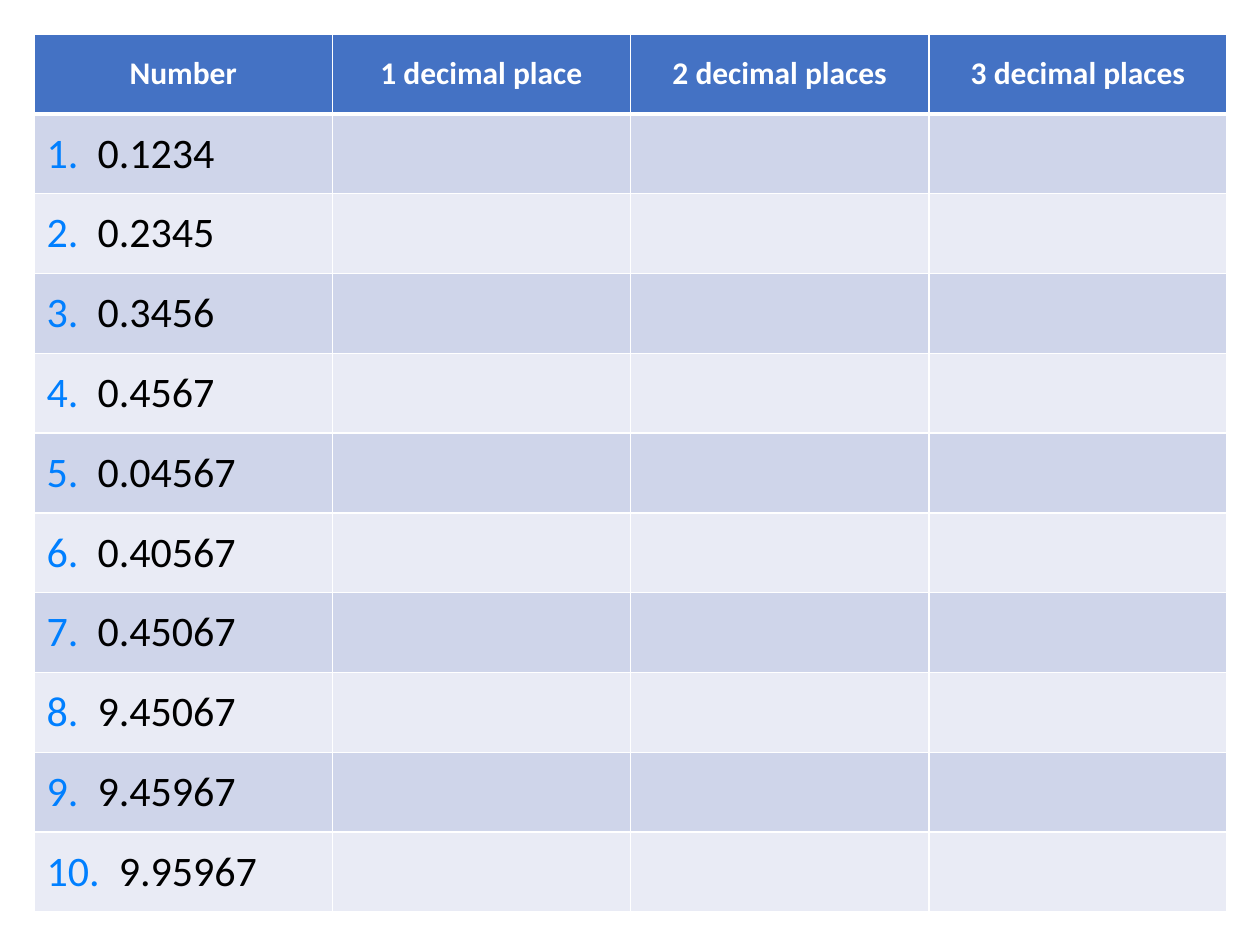
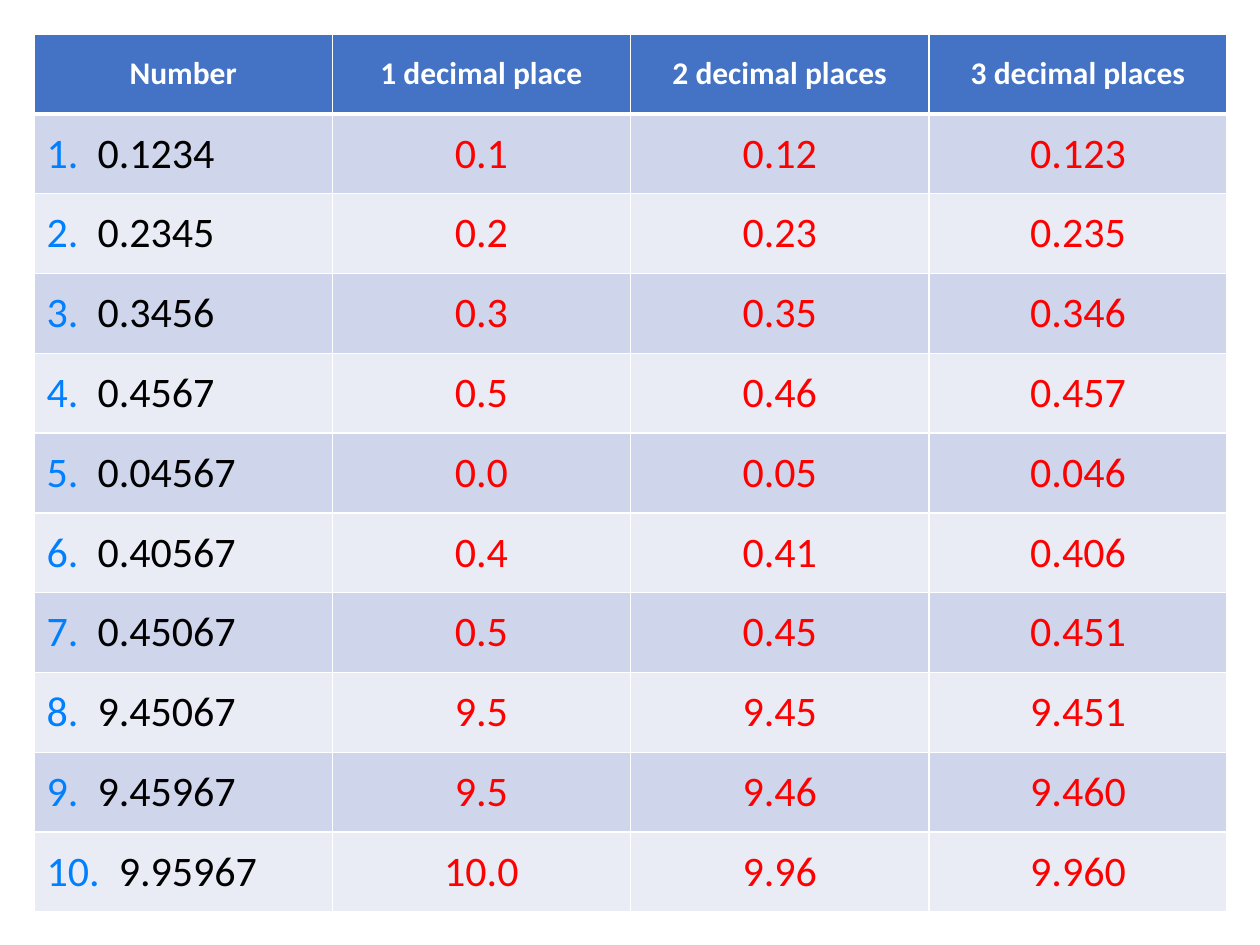
from dataclasses import dataclass
from typing import Any

from lxml import etree
from pptx import Presentation
from pptx import util as u
from pptx.dml.color import RGBColor
from pptx.enum import text
from pptx.oxml.ns import qn

HEADINGS = ["Number", "1 decimal place", "2 decimal places", "3 decimal places"]
ROUNDINGS = [
    ("0.1234", "0.1", "0.12", "0.123"),
    ("0.2345", "0.2", "0.23", "0.235"),
    ("0.3456", "0.3", "0.35", "0.346"),
    ("0.4567", "0.5", "0.46", "0.457"),
    ("0.04567", "0.0", "0.05", "0.046"),
    ("0.40567", "0.4", "0.41", "0.406"),
    ("0.45067", "0.5", "0.45", "0.451"),
    ("9.45067", "9.5", "9.45", "9.451"),
    ("9.45967", "9.5", "9.46", "9.460"),
    ("9.95967", "10.0", "9.96", "9.960"),
]
CENTER = text.PP_ALIGN.CENTER
LEFT = text.PP_ALIGN.LEFT


def rgb(value):
    return RGBColor.from_string(value)


@dataclass
class Worksheet:
    deck: Any
    slide: Any = None
    font: str = "Calibri"
    header: str = "4472C4"
    bands: tuple = ("CFD5EA", "E9EBF5")
    rule: str = "FFFFFF"
    heading: str = "FFFFFF"
    label: str = "007FFF"
    number: str = "000000"
    answer: str = "FF0000"

    def new_slide(self):
        self.slide = self.deck.slides.add_slide(self.deck.slide_layouts[6])

    def borders(self, cell, top=1, bottom=1):
        properties = cell._tc.get_or_add_tcPr()
        for side, points in {"L": 1, "R": 1, "T": top, "B": bottom}.items():
            line = etree.SubElement(properties, qn(f"a:ln{side}"), w=str(u.Pt(points)))
            fill = etree.SubElement(line, qn("a:solidFill"))
            etree.SubElement(fill, qn("a:srgbClr"), val=self.rule)

    def cell_text(self, cell, parts, align, size=24, bold=False):
        cell.vertical_anchor = text.MSO_ANCHOR.MIDDLE
        paragraph = cell.text_frame.paragraphs[0]
        paragraph.alignment = align
        for wording, color in parts:
            run = paragraph.add_run()
            run.text = wording
            run.font.color.rgb = rgb(color)
            for name, value in {"name": self.font, "size": u.Pt(size), "bold": bold}.items():
                setattr(run.font, name, value)

    def shade(self, cell, color):
        cell.fill.solid()
        cell.fill.fore_color.rgb = rgb(color)

    def rounding_table(self, show_answers):
        table = self.slide.shapes.add_table(
            len(ROUNDINGS) + 1, len(HEADINGS),
            u.Inches(0.27), u.Inches(0.27), u.Inches(9.47), u.Inches(6.97),
        ).table
        for column, heading in enumerate(HEADINGS):
            cell = table.cell(0, column)
            self.borders(cell, bottom=3)
            self.shade(cell, self.header)
            self.cell_text(cell, [(heading, self.heading)], CENTER, size=18, bold=True)
        for row, (number, *answers) in enumerate(ROUNDINGS, start=1):
            for column in range(len(HEADINGS)):
                cell = table.cell(row, column)
                self.borders(cell, top=3 if row == 1 else 1)
                self.shade(cell, self.bands[(row - 1) % 2])
            question = [(f"{row}.  ", self.label), (number, self.number)]
            self.cell_text(table.cell(row, 0), question, LEFT)
            if show_answers:
                for column, answer in enumerate(answers, start=1):
                    self.cell_text(table.cell(row, column), [(answer, self.answer)], CENTER)


def main():
    deck = Presentation()
    deck.slide_width, deck.slide_height = u.Inches(10), u.Inches(7.5)
    worksheet = Worksheet(deck)
    for show_answers in (False, True):
        worksheet.new_slide()
        worksheet.rounding_table(show_answers)
    deck.save("out.pptx")


if __name__ == "__main__":
    main()
